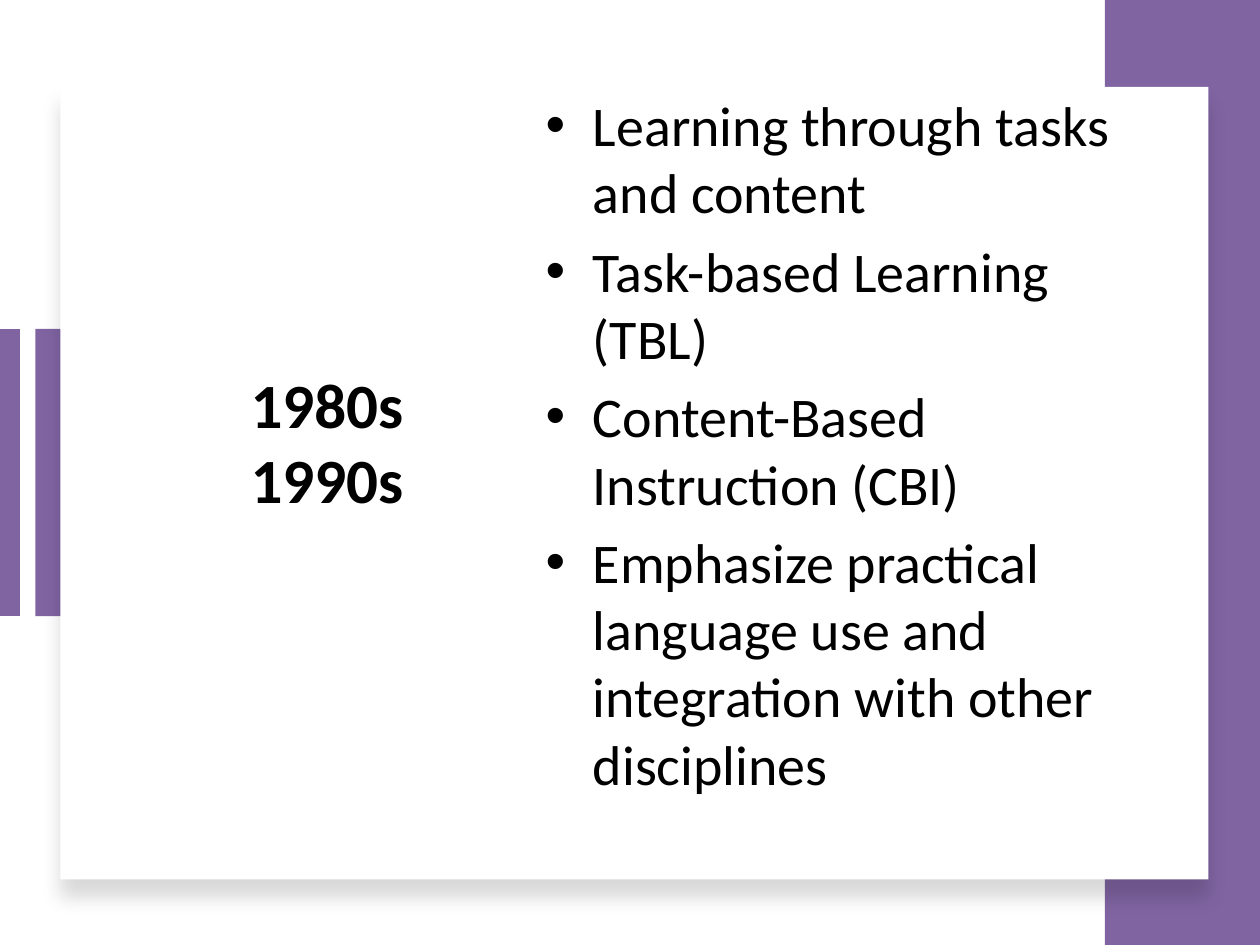
from lxml import etree
from pptx import Presentation
from pptx.dml.color import RGBColor
from pptx.enum import shapes, text
from pptx.oxml.ns import qn
from pptx.util import Inches, Pt

WIDTH, HEIGHT = Inches(10), Inches(7.5)
COLS, ROWS = 100, 75  # grid cells of a tenth of an inch
PURPLE, WHITE, BLACK = "8064A2", "FFFFFF", "000000"


def rgb(value):
    return RGBColor.from_string(value)


class Deck:
    """Holds the text style and the current slide."""

    base = {"name": "Calibri", "bold": False}

    def __init__(self, prs):
        self.s = prs.slides.add_slide(prs.slide_layouts[1])

    def grid(self, col, row, cols, rows):
        return (int(col * WIDTH / COLS), int(row * HEIGHT / ROWS),
                int(cols * WIDTH / COLS), int(rows * HEIGHT / ROWS))

    def rect(self, cell, fill):
        sp = self.s.shapes.add_shape(shapes.MSO_SHAPE.RECTANGLE, *self.grid(*cell))
        sp.shadow.inherit = False
        sp.fill.solid()
        sp.fill.fore_color.rgb = rgb(fill)
        sp.line.fill.background()
        return sp

    def soft_shadow(self, sp, blur, dist, angle, opacity):
        effects = sp._element.spPr.find(qn("a:effectLst"))
        shadow = etree.SubElement(effects, qn("a:outerShdw"), {
            "blurRad": str(Pt(blur)), "dist": str(Pt(dist)),
            "dir": str(angle * 60000), "algn": "t", "rotWithShape": "0"})
        color = etree.SubElement(shadow, qn("a:srgbClr"), val=BLACK)
        etree.SubElement(color, qn("a:alpha"), val=str(opacity * 1000))

    def line(self, col, row, rows, width, color):
        x, y, _, h = self.grid(col, row, 0, rows)
        cx = self.s.shapes.add_connector(shapes.MSO_CONNECTOR.STRAIGHT, x, y, x, y + h)
        cx.line.color.rgb = rgb(color)
        cx.line.width = Pt(width)
        etree.SubElement(cx._element.spPr, qn("a:effectLst"))

    def fill_placeholder(self, idx, cell, lines, **style):
        sp = self.s.placeholders[idx]
        self.s.shapes._spTree.append(sp._element)  # in front of the panels
        sp.left, sp.top, sp.width, sp.height = self.grid(*cell)
        tf = sp.text_frame
        tf.text = "\n".join(lines)
        frame = {"word_wrap": True, "auto_size": text.MSO_AUTO_SIZE.NONE,
                 "vertical_anchor": text.MSO_ANCHOR.MIDDLE}
        for key, value in frame.items():
            setattr(tf, key, value)
        tf.paragraphs[0].space_before = Pt(0)
        for p in tf.paragraphs:
            for r in p.runs:
                for key, value in {**self.base, **style}.items():
                    setattr(r.font, key, value)
                r.font.color.rgb = rgb(BLACK)
        return tf


def main():
    prs = Presentation()
    prs.slide_width, prs.slide_height = WIDTH, HEIGHT
    deck = Deck(prs)

    # Purple accents on the left and right edges
    deck.rect((2.8, 26.1, 2.5, 22.8), PURPLE)
    deck.line(0.6, 26.1, 22.8, 14, PURPLE)
    deck.rect((87.7, 0, 12.3, ROWS), PURPLE)

    # White card
    card = deck.rect((4.8, 6.9, 91.1, 62.9), WHITE)
    deck.soft_shadow(card, blur=11, dist=10, angle=90, opacity=15)

    # Decades and their list
    deck.fill_placeholder(0, (9.5, 13.6, 32.9, 42.8), ["1980s\v1990s"],
                          size=Pt(36), bold=True)
    body = deck.fill_placeholder(1, (42.3, 10.3, 50.7, 54.5), [
        "Learning through tasks and content",
        "Task-based Learning (TBL)",
        "Content-Based Instruction (CBI)",
        "Emphasize practical language use and integration with other disciplines",
    ], size=Pt(32))
    body.margin_bottom = Inches(0.52)  # lifts the list above the centre

    prs.save("out.pptx")


if __name__ == "__main__":
    main()
